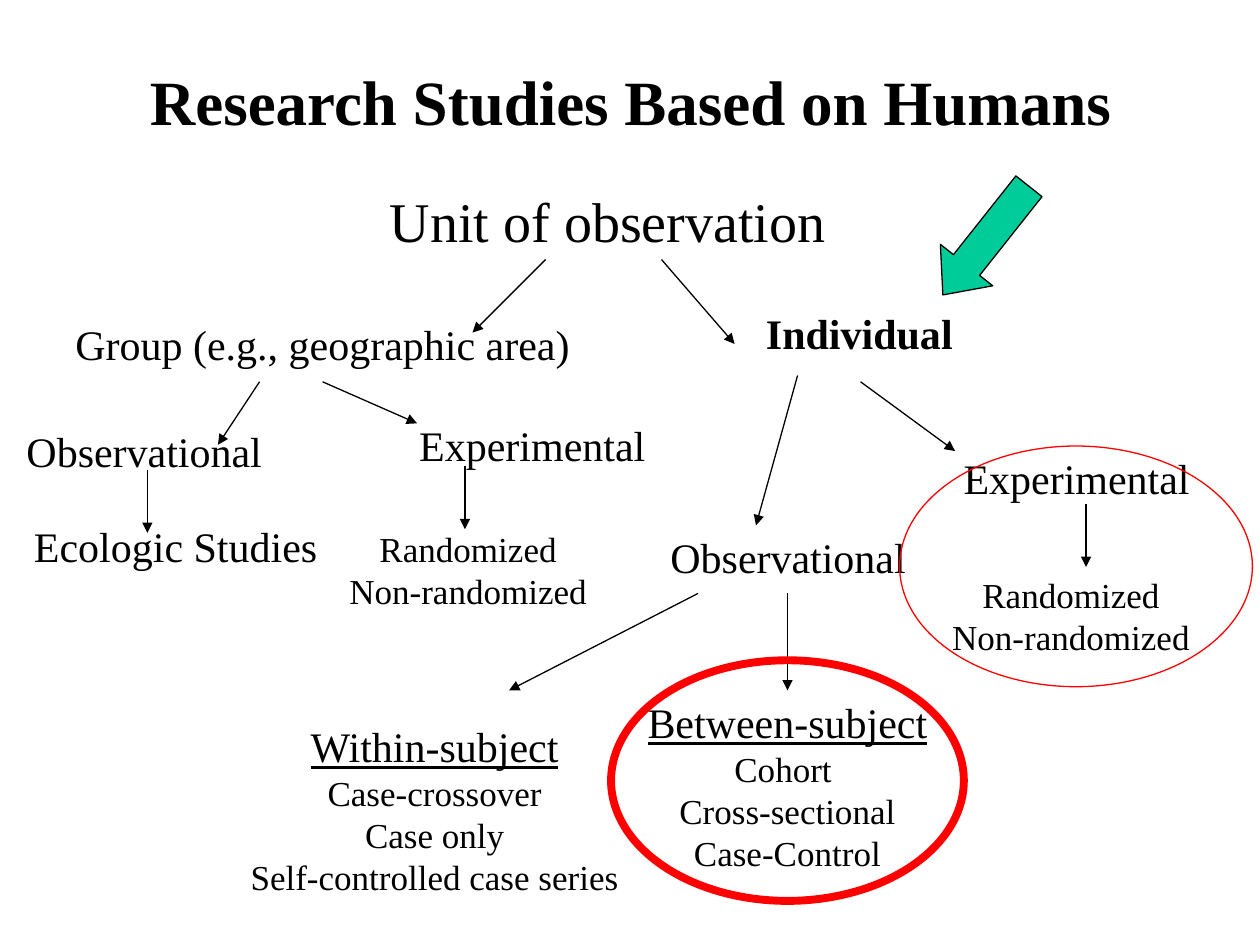
"""Build a tree of human research study types."""
from lxml import etree
from pptx import Presentation
from pptx import util as u
from pptx.dml.color import RGBColor
from pptx.enum import shapes, text
from pptx.oxml.ns import qn

FONT = "Times New Roman"
HUES = {"ink": "000000", "arrow": "00CC99", "ring": "FF0000"}
TITLE = "Research Studies Based on Humans"
DESIGNS = ["Randomized", "Non-randomized"]
BETWEEN = "Between-subject"

# fields: lines, box, size of first line, style, wrap
NODES = [
    (["Unit of observation"], (2.98, 1.43, 3.69, 0.64), 32, "", False),
    (["Group (e.g., geographic area)"], (0.48, 2.48, 4.16, 0.5), 24, "", False),
    (["Individual"], (5.97, 2.39, 1.7, 0.5), 24, "bold", False),
    (["Observational"], (0.06, 3.33, 2.17, 0.5), 24, "", True),
    (["Experimental"], (2.89, 3.28, 2.67, 0.5), 24, "", True),
    (["Ecologic Studies"], (0.16, 4.08, 2.47, 0.5), 24, "", False),
    (DESIGNS, (2.67, 4.14, 2.09, 0.77), 20, "", True),
    (["Observational"], (5.17, 4.17, 2.17, 0.5), 24, "", True),
    (["Experimental"], (7.21, 3.54, 2.67, 0.5), 24, "", True),
    (DESIGNS, (7.45, 4.5, 2.1, 0.77), 20, "", False),
    (["Within-subject", "Case-crossover", "Case only", "Self-controlled case series"],
     (1.88, 5.67, 3.14, 1.51), 24, "under", False),
    ([BETWEEN, "Cohort ", "Cross-sectional", "Case-Control"],
     (5.03, 5.48, 2.44, 1.51), 24, "under", False),
]
LINKS = [
    (4.33, 2.06, 3.75, 2.64), (5.25, 2.06, 5.83, 2.73),
    (2.06, 3.03, 1.73, 3.53), (2.56, 3.03, 3.31, 3.36),
    (1.17, 3.73, 1.17, 4.23), (3.69, 3.7, 3.69, 4.2),
    (6.33, 2.98, 6, 4.17), (6.83, 3.03, 7.58, 3.58),
    (8.62, 4, 8.62, 4.5), (5.54, 4.71, 4.04, 5.48),
]
STEM = (6.25, 4.71, 6.25, 5.48)
RINGS = [((4.85, 5.24, 2.8, 1.91), 4.5), ((7.14, 3.54, 2.8, 1.91), 0.75)]
POINTER = (7.56, 1.36, 0.53, 1.1)


def inches(box):
    return [u.Inches(n) for n in box]


def hue(name):
    return RGBColor.from_string(HUES[name])


def style(para, size, bold=False, under=False):
    para.alignment = text.PP_ALIGN.CENTER
    for run in para.runs:
        font = run.font
        font.name, font.size = FONT, u.Pt(size)
        font.bold, font.underline = bold, under
        font.color.rgb = hue("ink")


def add_node(slide, lines, box, size, look, wrap):
    node = slide.shapes.add_textbox(*inches(box))
    frame = node.text_frame
    frame.text = "\n".join(lines)
    frame.word_wrap = wrap
    frame.auto_size = text.MSO_AUTO_SIZE.SHAPE_TO_FIT_TEXT
    head, *rest = frame.paragraphs
    style(head, size, look == "bold", look == "under")
    for para in rest:
        style(para, 20)
    return node


def add_link(slide, ends):
    link = slide.shapes.add_connector(shapes.MSO_CONNECTOR.STRAIGHT, *inches(ends))
    link.line.width = u.Pt(0.75)
    link.line.color.rgb = hue("ink")
    etree.SubElement(link.line._get_or_add_ln(), qn("a:tailEnd"), type="triangle")
    etree.SubElement(link._element.spPr, qn("a:effectLst"))
    return link


def add_mark(slide, kind, box, color, width):
    mark = slide.shapes.add_shape(kind, *inches(box))
    mark.shadow.inherit = False
    mark.fill.background()
    mark.line.color.rgb = hue(color)
    mark.line.width = u.Pt(width)
    return mark


def main():
    deck = Presentation()
    deck.slide_width, deck.slide_height = inches((10, 7.5))
    slide = deck.slides.add_slide(deck.slide_layouts[5])
    title = slide.shapes.title
    title.left, title.top, title.width, title.height = inches((0.17, 0.17, 9.67, 1.25))
    title.text_frame.text = TITLE
    title.text_frame.vertical_anchor = text.MSO_ANCHOR.MIDDLE
    style(title.text_frame.paragraphs[0], 36, True)

    nodes = {node[0][0]: add_node(slide, *node) for node in NODES}
    for ends in LINKS:
        add_link(slide, ends)
    add_link(slide, STEM).end_connect(nodes[BETWEEN], 0)

    arrow = add_mark(slide, shapes.MSO_SHAPE.DOWN_ARROW, POINTER, "ink", 0.75)
    arrow.fill.solid()
    arrow.fill.fore_color.rgb = hue("arrow")
    arrow.rotation = 38.4
    arrow.adjustments[1] = 0.57
    for box, width in RINGS:
        add_mark(slide, shapes.MSO_SHAPE.OVAL, box, "ring", width)
    deck.save("out.pptx")


if __name__ == "__main__":
    main()
